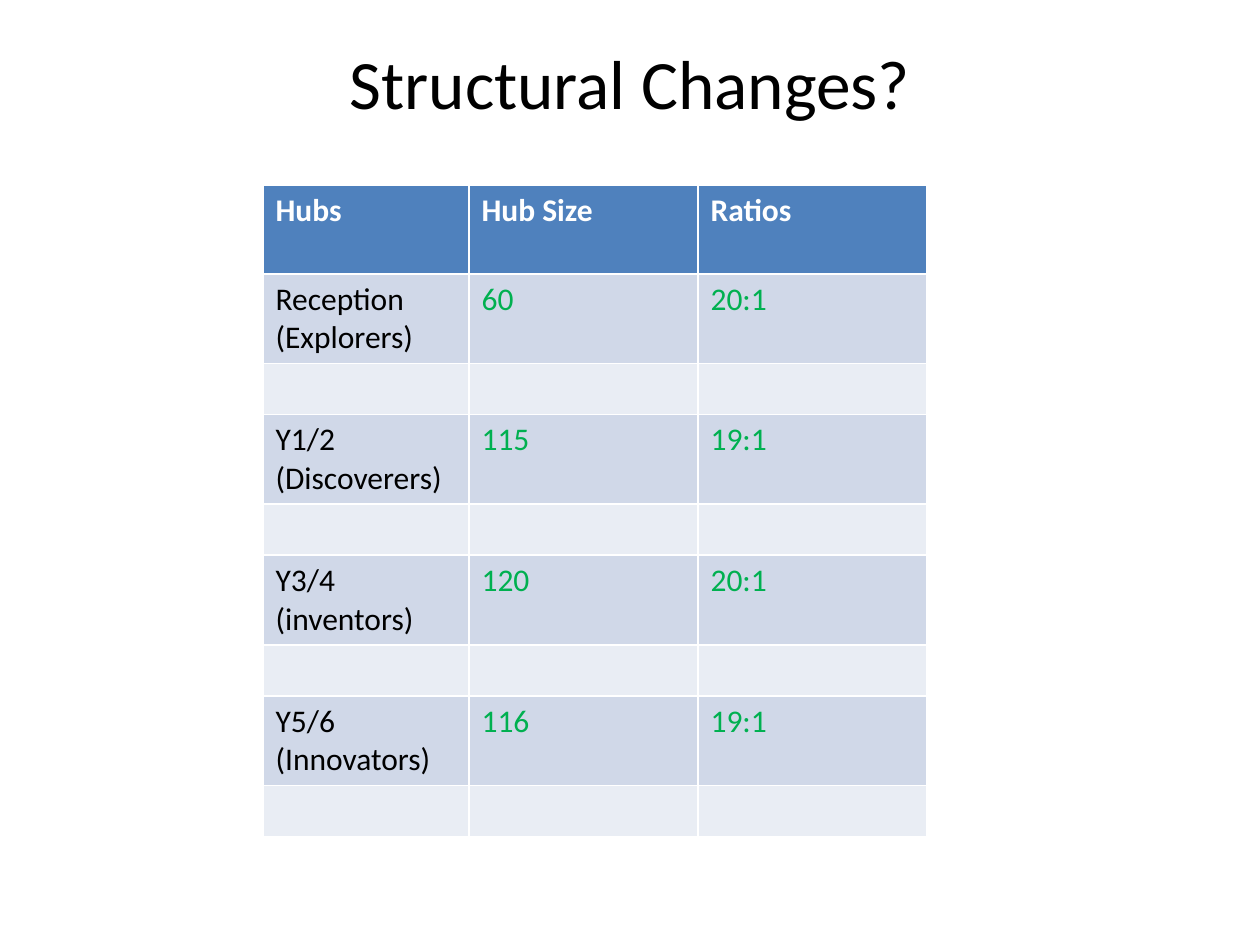
"""Build the Structural Changes slide with its table of hubs, sizes and ratios."""
from pptx import Presentation
from pptx import util as u
from pptx.dml.color import RGBColor
from pptx.enum import text

COLORS = {
    "header": "4F81BD",
    "hub_row": "D0D8E8",
    "gap_row": "E9EDF4",
    "white": "FFFFFF",
    "black": "000000",
    "green": "00B050",
}
FONT = "Calibri"
COLUMN_WIDTHS = (206, 229, 229)
TALL_ROW, GAP_ROW = 89, 51
HEADINGS = ("Hubs", "Hub Size", "Ratios")
HUBS = (
    ("Reception\n(Explorers)", "60", "20:1"),
    ("Y1/2\n(Discoverers)", "115", "19:1"),
    ("Y3/4\n(inventors)", "120", "20:1"),
    ("Y5/6\n(Innovators)", "116", "19:1"),
)


def px(length):
    return u.Emu(round(length * 914400 / 126))


def set_font(paragraph, size, color, bold=False):
    paragraph.font.name = FONT
    paragraph.font.size = u.Pt(size)
    paragraph.font.bold = bold
    paragraph.font.color.rgb = RGBColor.from_string(COLORS[color])


prs = Presentation()
prs.slide_width, prs.slide_height = px(1260), px(945)
slide = prs.slides.add_slide(prs.slide_layouts[5])

title = slide.shapes.title
title.left, title.top, title.width, title.height = px(63), px(38), px(1134), px(87)
title.text_frame.text = "Structural Changes?"
title.text_frame.vertical_anchor = text.MSO_ANCHOR.MIDDLE
heading = title.text_frame.paragraphs[0]
heading.alignment = text.PP_ALIGN.CENTER
set_font(heading, 39.6, "black")

rows = [HEADINGS]
for hub in HUBS:
    rows += [hub, ("", "", "")]
heights = [TALL_ROW if row[0] else GAP_ROW for row in rows]

hub_table = slide.shapes.add_table(
    len(rows), len(HEADINGS), px(263), px(185), px(sum(COLUMN_WIDTHS)), px(sum(heights))
).table
for column, width in zip(hub_table.columns, COLUMN_WIDTHS):
    column.width = px(width)

for r, row in enumerate(rows):
    hub_table.rows[r].height = px(heights[r])
    is_header = r == 0
    fill = "header" if is_header else "hub_row" if row[0] else "gap_row"
    for c, wording in enumerate(row):
        cell = hub_table.cell(r, c)
        cell.fill.solid()
        cell.fill.fore_color.rgb = RGBColor.from_string(COLORS[fill])
        if wording:
            cell.text_frame.text = wording
            color = "white" if is_header else "green" if c else "black"
            for paragraph in cell.text_frame.paragraphs:
                set_font(paragraph, 18, color, bold=is_header)

prs.save("out.pptx")
